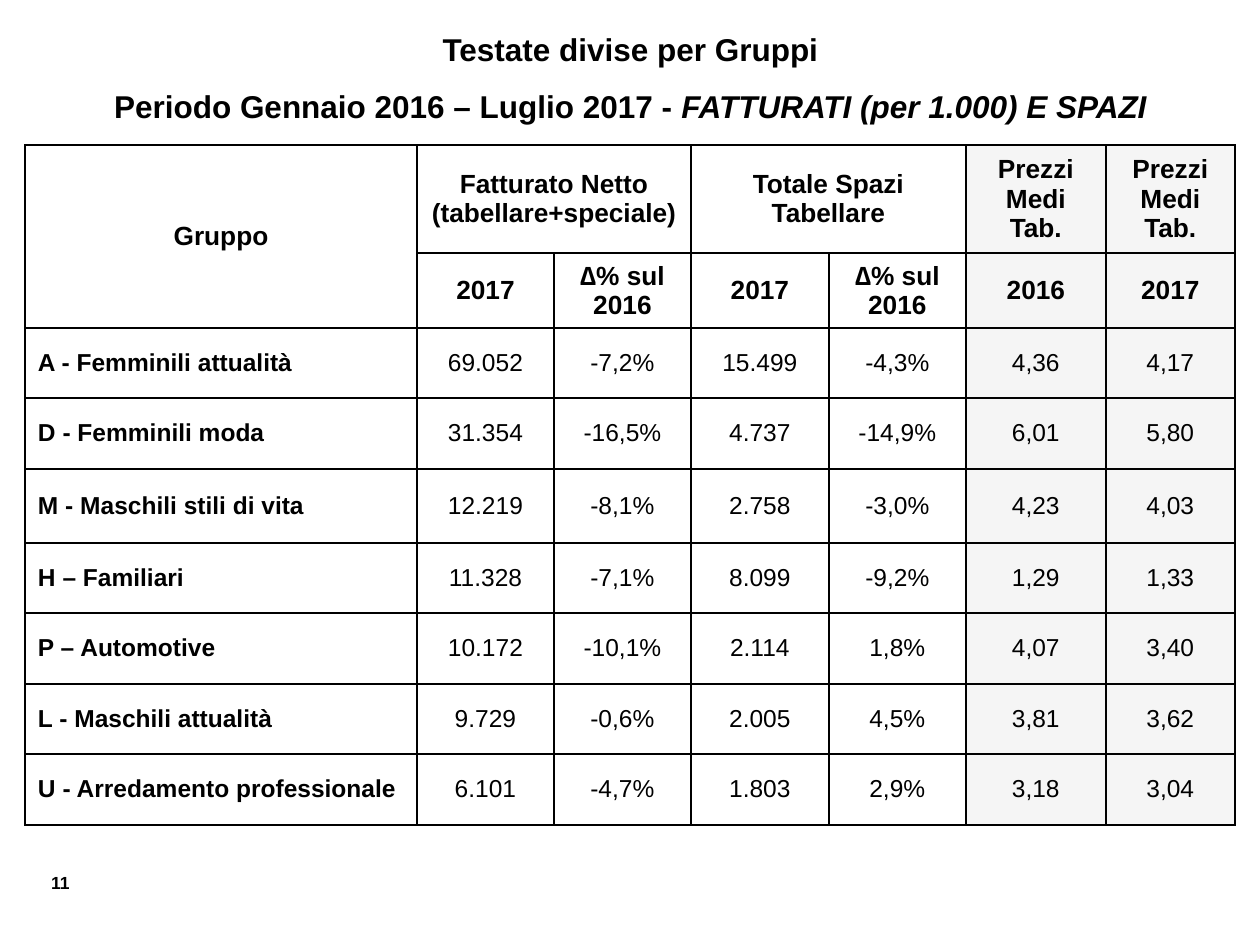
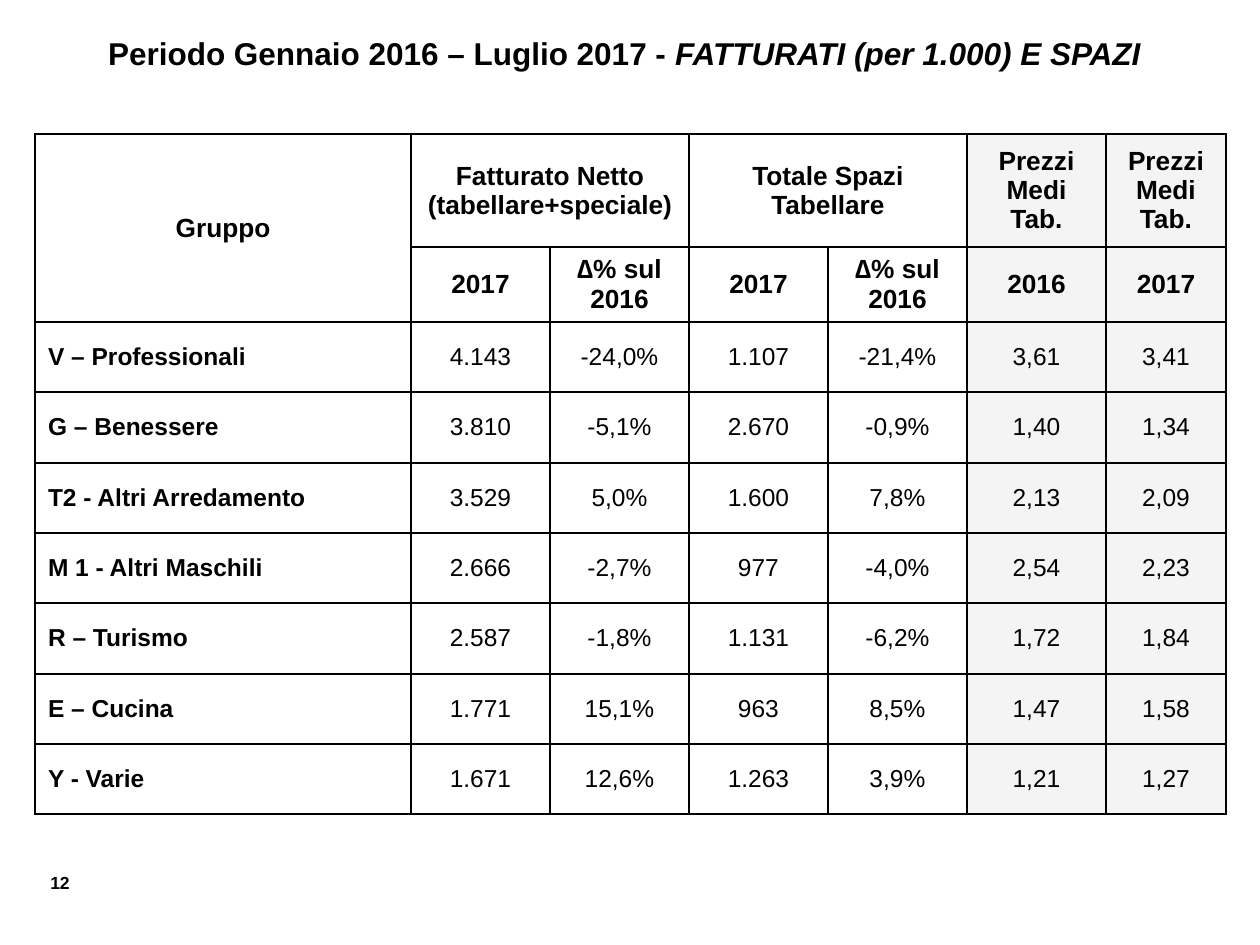
from lxml.etree import SubElement
from pptx import Presentation
from pptx.dml.color import RGBColor
from pptx.enum.text import MSO_ANCHOR, PP_ALIGN
from pptx.oxml.ns import qn
from pptx.util import Inches, Pt

BLACK = RGBColor(0x00, 0x00, 0x00)
PALE_GREY = RGBColor(0xF2, 0xF2, 0xF2)
PX = Inches(10) / 1260

PERIOD = [("Periodo Gennaio 2016 – Luglio 2017 - ", False),
          ("FATTURATI (per 1.000) E SPAZI", True)]
HEADERS = [
    ["Gruppo", "Fatturato Netto (tabellare+speciale)", "", "Totale Spazi Tabellare", "",
     "Prezzi Medi Tab.", "Prezzi Medi Tab."],
    ["", "2017", "∆% sul 2016", "2017", "∆% sul 2016", "2016", "2017"],
]
HEADER_SPANS = [((0, 0), (1, 0)), ((0, 1), (0, 2)), ((0, 3), (0, 4))]
FIRST_PRICE_COLUMN = 5

LARGER_GROUPS = [
    ["A - Femminili attualità", "69.052", "-7,2%", "15.499", "-4,3%", "4,36", "4,17"],
    ["D - Femminili moda", "31.354", "-16,5%", "4.737", "-14,9%", "6,01", "5,80"],
    ["M - Maschili stili di vita", "12.219", "-8,1%", "2.758", "-3,0%", "4,23", "4,03"],
    ["H – Familiari", "11.328", "-7,1%", "8.099", "-9,2%", "1,29", "1,33"],
    ["P – Automotive", "10.172", "-10,1%", "2.114", "1,8%", "4,07", "3,40"],
    ["L - Maschili attualità", "9.729", "-0,6%", "2.005", "4,5%", "3,81", "3,62"],
    ["U - Arredamento professionale", "6.101", "-4,7%", "1.803", "2,9%", "3,18", "3,04"],
]
SMALLER_GROUPS = [
    ["V – Professionali", "4.143", "-24,0%", "1.107", "-21,4%", "3,61", "3,41"],
    ["G – Benessere", "3.810", "-5,1%", "2.670", "-0,9%", "1,40", "1,34"],
    ["T2 - Altri Arredamento", "3.529", "5,0%", "1.600", "7,8%", "2,13", "2,09"],
    ["M 1 - Altri Maschili", "2.666", "-2,7%", "977", "-4,0%", "2,54", "2,23"],
    ["R – Turismo", "2.587", "-1,8%", "1.131", "-6,2%", "1,72", "1,84"],
    ["E – Cucina", "1.771", "15,1%", "963", "8,5%", "1,47", "1,58"],
    ["Y - Varie", "1.671", "12,6%", "1.263", "3,9%", "1,21", "1,27"],
]


def px(length):
    return round(length * PX)


class ReportDeck:
    font_name = "Arial"

    def __init__(self):
        self.presentation = Presentation()
        self.presentation.slide_width = px(1260)
        self.presentation.slide_height = px(945)
        self.slide = None

    def add_slide(self, number):
        title_only = self.presentation.slide_layouts[5]
        self.slide = self.presentation.slides.add_slide(title_only)
        self.page_number(number)

    def style(self, paragraph, size, align, bold=True):
        paragraph.alignment = align
        font = paragraph.font
        font.name, font.size, font.bold = self.font_name, Pt(size), bold
        font.color.rgb = BLACK

    def page_number(self, number):
        footer = self.slide.shapes.add_textbox(px(24), px(866), px(58), px(34))
        paragraph = footer.text_frame.paragraphs[0]
        footer.text_frame.word_wrap = True
        paragraph.text = str(number)
        self.style(paragraph, 10, PP_ALIGN.RIGHT)

    def title(self, box, lines):
        """Each line is a list of (text, italic) runs."""
        title = self.slide.shapes.title
        title.left, title.top, title.width, title.height = map(px, box)
        frame = title.text_frame
        frame.word_wrap = True
        frame.vertical_anchor = MSO_ANCHOR.TOP
        for index, line in enumerate(lines):
            paragraph = frame.add_paragraph() if index else frame.paragraphs[0]
            paragraph.space_before = Pt(11 if index else 0)
            self.style(paragraph, 18, PP_ALIGN.CENTER)
            for text, italic in line:
                run = paragraph.add_run()
                run.text = text
                run.font.italic = italic

    def cell_borders(self, cell):
        properties = cell._tc.get_or_add_tcPr()
        for side in ("a:lnL", "a:lnR", "a:lnT", "a:lnB"):
            line = SubElement(properties, qn(side), w=str(Pt(1)))
            fill = SubElement(line, qn("a:solidFill"))
            SubElement(fill, qn("a:srgbClr"), val=str(BLACK))

    def cell_fill(self, cell, opacity):
        """Tint the cell, or leave it clear when opacity is 0."""
        if not opacity:
            cell.fill.background()
            return
        cell.fill.solid()
        cell.fill.fore_color.rgb = PALE_GREY
        color = cell._tc.tcPr.find(f"{qn('a:solidFill')}/{qn('a:srgbClr')}")
        SubElement(color, qn("a:alpha"), val=str(opacity * 1000))

    def cell_text(self, cell, text, is_header, is_group):
        cell.vertical_anchor = MSO_ANCHOR.MIDDLE
        side, edge = (13, 6) if is_header else (0, 0)
        cell.margin_left = px(13 if is_group else side)
        cell.margin_right = px(side)
        cell.margin_top = cell.margin_bottom = px(edge)
        paragraph = cell.text_frame.paragraphs[0]
        paragraph.text = text
        align = PP_ALIGN.LEFT if is_group and not is_header else PP_ALIGN.CENTER
        self.style(paragraph, 15 if is_header else 14, align, is_header or is_group)

    def group_table(self, left, top, widths, heights, groups, price_opacity):
        rows = HEADERS + groups
        frame = self.slide.shapes.add_table(len(rows), len(widths), px(left), px(top),
                                            px(sum(widths)), px(sum(heights)))
        table = frame.table
        table.first_row = table.horz_banding = False
        for column, width in zip(table.columns, widths):
            column.width = px(width)
        for row, height in zip(table.rows, heights):
            row.height = px(height)
        for start, end in HEADER_SPANS:
            table.cell(*start).merge(table.cell(*end))
        for r, values in enumerate(rows):
            for c, value in enumerate(values):
                cell = table.cell(r, c)
                self.cell_borders(cell)
                self.cell_fill(cell, price_opacity if c >= FIRST_PRICE_COLUMN else 0)
                self.cell_text(cell, value, r < len(HEADERS), c == 0)


def main():
    deck = ReportDeck()

    deck.add_slide(11)
    deck.title((25, 24, 1211, 113), [[("Testate divise per Gruppi", False)], PERIOD])
    deck.group_table(25, 145, [392, 137, 137, 138, 137, 140, 129],
                     [108, 75, 70, 71, 74, 70, 71, 70, 71], LARGER_GROUPS, 70)

    deck.add_slide(12)
    deck.title((34, 28, 1181, 89), [PERIOD])
    deck.group_table(35, 134, [376] + [139] * 5 + [120],
                     [113, 75, 70, 71, 70, 70, 71, 70, 70], SMALLER_GROUPS, 80)

    deck.presentation.save("out.pptx")


if __name__ == "__main__":
    main()
